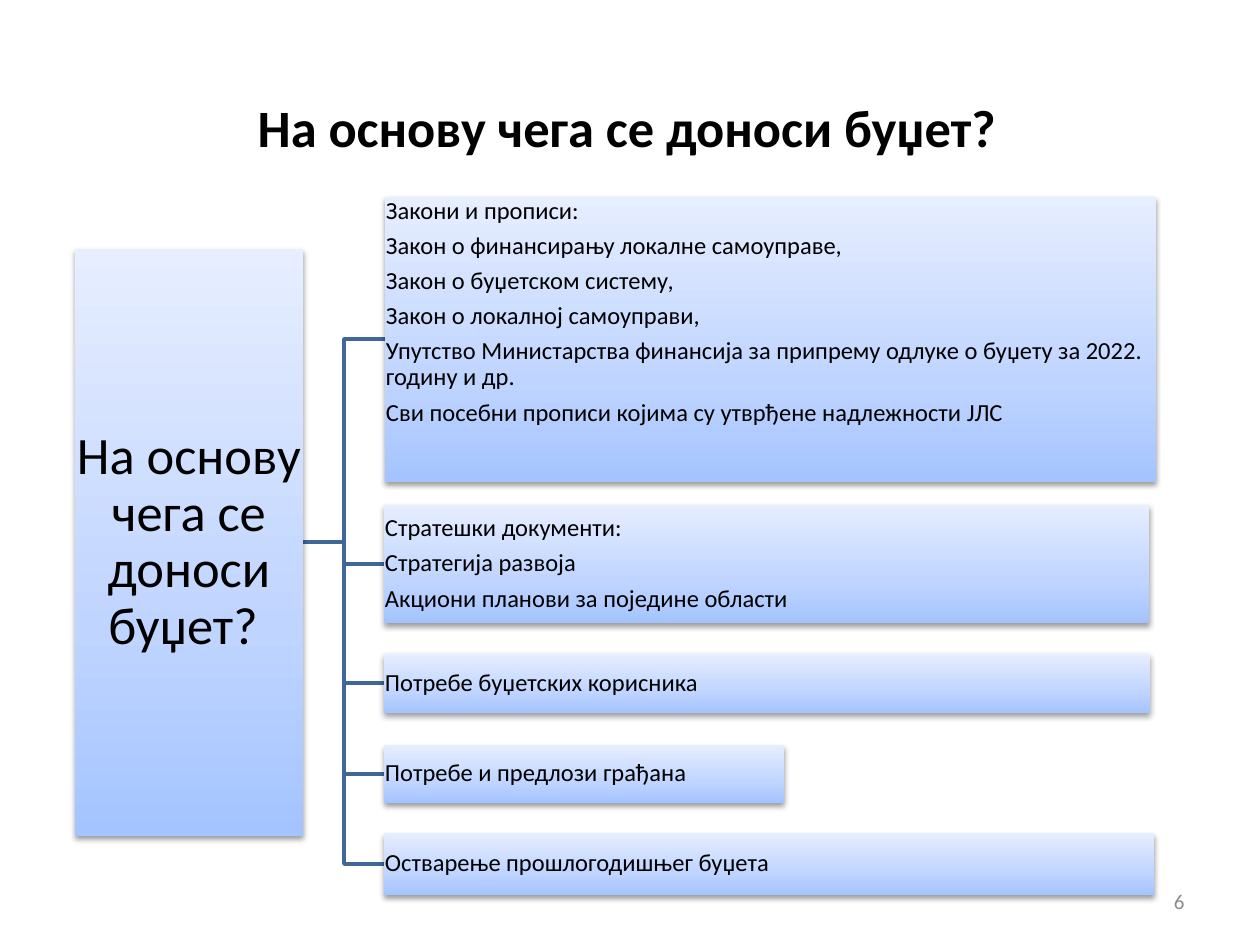
from lxml import etree
from pptx import Presentation
from pptx.dml.color import RGBColor
from pptx.enum.shapes import MSO_SHAPE
from pptx.enum.text import MSO_ANCHOR, PP_ALIGN
from pptx.oxml import parse_xml
from pptx.oxml.ns import nsdecls
from pptx.util import Pt

PX = 914400 // 126
RECT = MSO_SHAPE.RECTANGLE
TOP, MID = MSO_ANCHOR.TOP, MSO_ANCHOR.MIDDLE
LEFT, MIDDLE, RIGHT = PP_ALIGN.LEFT, PP_ALIGN.CENTER, PP_ALIGN.RIGHT
FONT = "Calibri"
COLORS = {"text": "000000", "page": "8C8C8C", "line": "3F6797",
          "low": "A4C4FF", "mid": "BFD4FF", "high": "E6EEFF"}

TITLE = "На основу чега се доноси буџет?"
ROOT = (75, 249, 228, 587)
TRUNK = 344
# Each branch: box, anchor, lines
BRANCHES = [
    ((385, 197, 771, 285), TOP, [
        "Закони и прописи:",
        "Закон о финансирању локалне самоуправе,",
        "Закон о буџетском систему,",
        "Закон о локалној самоуправи,",
        "Упутство Министарства финансија за припрему одлуке о буџету за 2022. годину и др.",
        "Сви посебни прописи којима су утврђене надлежности ЈЛС"]),
    ((384, 505, 765, 118), MID, [
        "Стратешки документи:",
        "Стратегија развоја",
        "Акциони планови за поједине области"]),
    ((384, 654, 766, 59), MID, ["Потребе буџетских корисника"]),
    ((384, 745, 400, 58), MID, ["Потребе и предлози грађана"]),
    ((384, 833, 770, 62), MID, ["Остварење прошлогодишњег буџета"]),
]


def scale(box):
    return [v * PX for v in box]


def write(shape, lines, size, align, anchor, color="text", bold=False):
    frame = shape.text_frame
    frame.word_wrap = True
    frame.vertical_anchor = anchor
    frame.text = "\n".join(lines)
    for para in frame.paragraphs:
        para.alignment = align
        for run in para.runs:
            font = run.font
            font.name, font.size, font.bold = FONT, Pt(size), bold
            font.color.rgb = RGBColor.from_string(COLORS[color])


def label(slide, box, line, size, align, **style):
    write(slide.shapes.add_textbox(*scale(box)), [line], size, align, MID, **style)


def panel(slide, box, lines, size, align, anchor, inset):
    shape = slide.shapes.add_shape(RECT, *scale(box))
    shape.line.fill.background()
    shape.shadow.inherit = False
    # Gradient rising from the bottom edge
    stops = "".join(
        f'<a:gs pos="{pos}000"><a:srgbClr val="{COLORS[key]}"/></a:gs>'
        for pos, key in ((0, "low"), (35, "mid"), (100, "high")))
    grad = parse_xml(f'<a:gradFill {nsdecls("a")} rotWithShape="1"><a:gsLst>{stops}'
                     '</a:gsLst><a:lin ang="16200000" scaled="0"/></a:gradFill>')
    props = shape._element.spPr
    props.find("{*}prstGeom").addnext(grad)
    # Soft shadow below
    shade = parse_xml(
        f'<a:outerShdw {nsdecls("a")} blurRad="40000" dist="20000" dir="5400000" '
        'rotWithShape="0"><a:srgbClr val="000000"/></a:outerShdw>')
    etree.SubElement(shade[0], shade[0].tag.replace("srgbClr", "alpha"), val="38000")
    props.find("{*}effectLst").append(shade)
    # Text
    write(shape, lines, size, align, anchor)
    frame = shape.text_frame
    frame.margin_left = frame.margin_right = inset * PX
    frame.margin_top = frame.margin_bottom = inset * PX
    for para in frame.paragraphs:
        para.line_spacing = 0.9
        para.space_after = Pt(0.35 * size)


def elbow(slide, box):
    left, top, wide, high = ROOT
    start, mid = left + wide, top + high // 2
    end = box[1] + box[3] // 2
    pen = slide.shapes.build_freeform(start * PX, mid * PX)
    points = [(TRUNK, mid), (TRUNK, end), (box[0], end)]
    pen.add_line_segments([scale(p) for p in points], close=False)
    shape = pen.convert_to_shape()
    shape.fill.background()
    shape.shadow.inherit = False
    shape.line.color.rgb = RGBColor.from_string(COLORS["line"])
    shape.line.width = Pt(2)


def main():
    deck = Presentation()
    deck.slide_width, deck.slide_height = scale((1260, 945))
    slide = deck.slides.add_slide(deck.slide_layouts[6])

    # Title and page number
    label(slide, (60, 68, 1134, 117), TITLE, 30, MIDDLE, bold=True)
    label(slide, (903, 876, 294, 50), "6", 12, RIGHT, color="page")

    # Tree: lines behind, boxes in front
    for box, _, _ in reversed(BRANCHES):
        elbow(slide, box)
    panel(slide, ROOT, [TITLE + " "], 30, MIDDLE, MID, 2)
    for box, anchor, lines in BRANCHES:
        panel(slide, box, lines, 14, LEFT, anchor, 1)

    deck.save("out.pptx")


if __name__ == "__main__":
    main()
